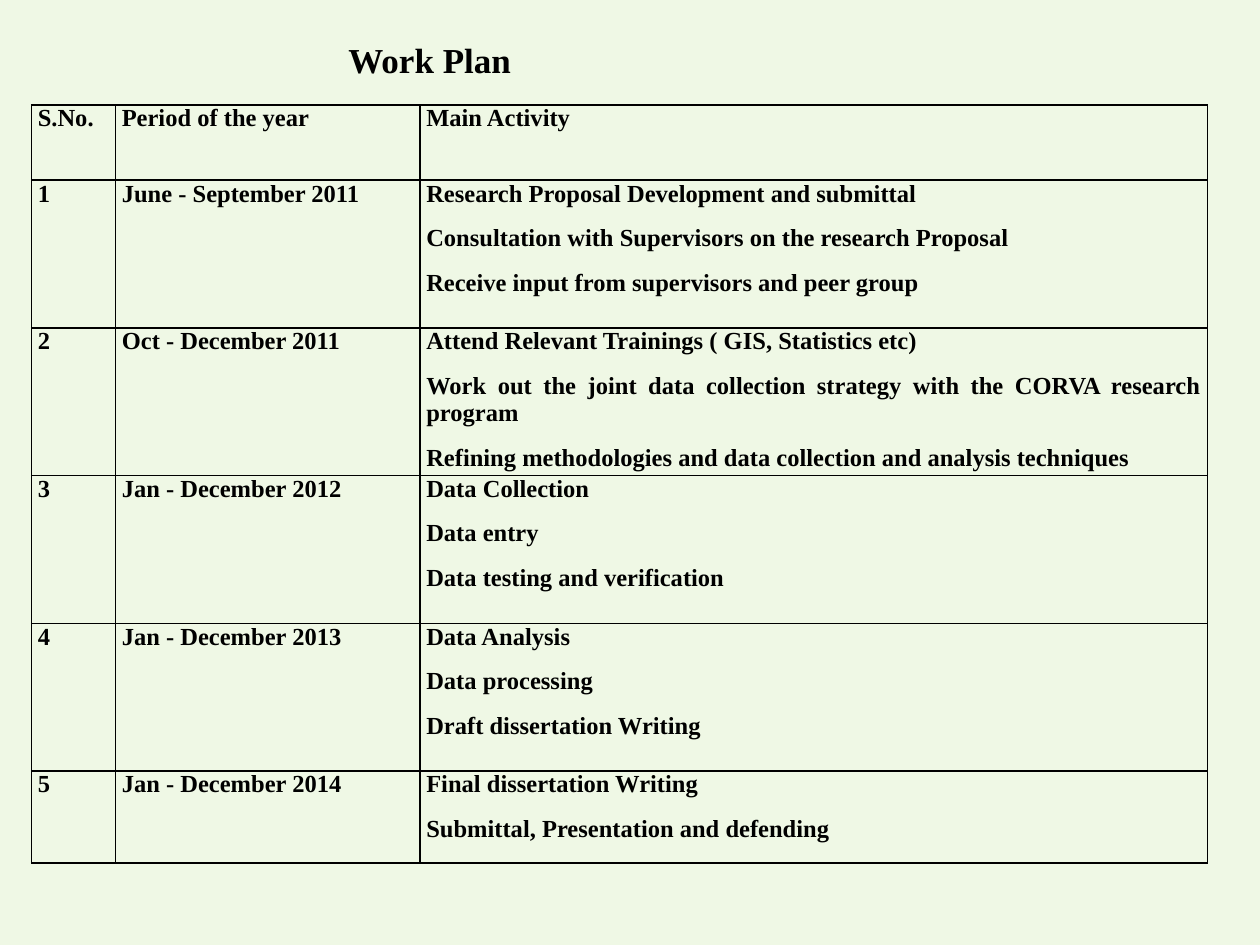
from lxml.etree import SubElement as Sub
from pptx import Presentation
from pptx.dml.color import RGBColor as Color
from pptx.enum.text import MSO_ANCHOR as Anchor, PP_ALIGN as Align
from pptx.oxml.ns import qn
from pptx.util import Pt

HUES = {"ground": "EFF8E5", "ink": "000000"}
FONT = "Times New Roman"
COLS = [48, 174, 450]
ROWS = [43, 84.4, 84.4, 84.4, 84.4, 52.6]
HEAD = ("S.No.", "Period of the year", ["Main Activity"])
PLAN = [
    ("June - September 2011", [
        "Research Proposal Development and submittal",
        "Consultation with Supervisors on the research Proposal",
        "Receive input from supervisors and peer group"]),
    ("Oct - December 2011", [
        "Attend Relevant Trainings ( GIS, Statistics etc)",
        "Work out the joint data collection strategy with the CORVA research program",
        "Refining methodologies and data collection and analysis techniques"]),
    ("Jan - December 2012", [
        "Data Collection", "Data entry", "Data testing and verification"]),
    ("Jan - December 2013", [
        "Data Analysis", "Data processing", "Draft dissertation Writing"]),
    ("Jan - December 2014", [
        "Final dissertation Writing", "Submittal, Presentation and defending"]),
]


def write(frame, lines, size=14, align=Align.JUSTIFY, after=10):
    """Fill a text frame with one bold paragraph per line."""
    for i, line in enumerate(lines):
        para = frame.paragraphs[0] if i == 0 else frame.add_paragraph()
        para.alignment, para.space_after = align, Pt(after)
        run = para.add_run()
        run.text = line
        font = run.font
        font.name, font.size, font.bold = FONT, Pt(size), True
        font.color.rgb = Color.from_string(HUES["ink"])


def frame_cell(cell):
    """Give a cell thin borders, slim margins and no fill."""
    cell.margin_left = cell.margin_right = Pt(3.6)
    cell.margin_top = cell.margin_bottom = 0
    props = cell._tc.get_or_add_tcPr()
    for side in ("lnL", "lnR", "lnT", "lnB"):
        line = Sub(props, qn(f"a:{side}"), w=str(Pt(1)))
        fill = Sub(line, qn("a:solidFill"))
        Sub(fill, qn("a:srgbClr"), val=HUES["ink"])
    cell.fill.background()


def add_title(slide, left, top, width, height):
    """Place the slide title in the given box."""
    frame = slide.shapes.add_textbox(Pt(left), Pt(top), Pt(width), Pt(height)).text_frame
    frame.word_wrap = False
    frame.vertical_anchor = Anchor.MIDDLE
    write(frame, ["Work Plan"], size=20, align=Align.LEFT, after=0)


def add_plan(slide, left, top):
    """Place the work plan table with its corner at the given point."""
    rows = [HEAD] + [(str(i), *row) for i, row in enumerate(PLAN, 1)]
    table = slide.shapes.add_table(
        len(ROWS), len(COLS), Pt(left), Pt(top), Pt(sum(COLS)), Pt(sum(ROWS))).table
    table.first_row = table.horz_banding = False
    for col, width in zip(table.columns, COLS):
        col.width = Pt(width)
    for row, height, (number, period, tasks) in zip(table.rows, ROWS, rows):
        row.height = Pt(height)
        for cell, lines in zip(row.cells, ([number], [period], tasks)):
            frame_cell(cell)
            write(cell.text_frame, lines)


def main():
    """Build and save the slide."""
    deck = Presentation()
    deck.slide_width, deck.slide_height = Pt(720), Pt(540)
    slide = deck.slides.add_slide(deck.slide_layouts[6])
    fill = slide.background.fill
    fill.solid()
    fill.fore_color.rgb = Color.from_string(HUES["ground"])
    add_plan(slide, 18, 60)
    add_title(slide, 192, 18, 113, 31.5)
    deck.save("out.pptx")


if __name__ == "__main__":
    main()
